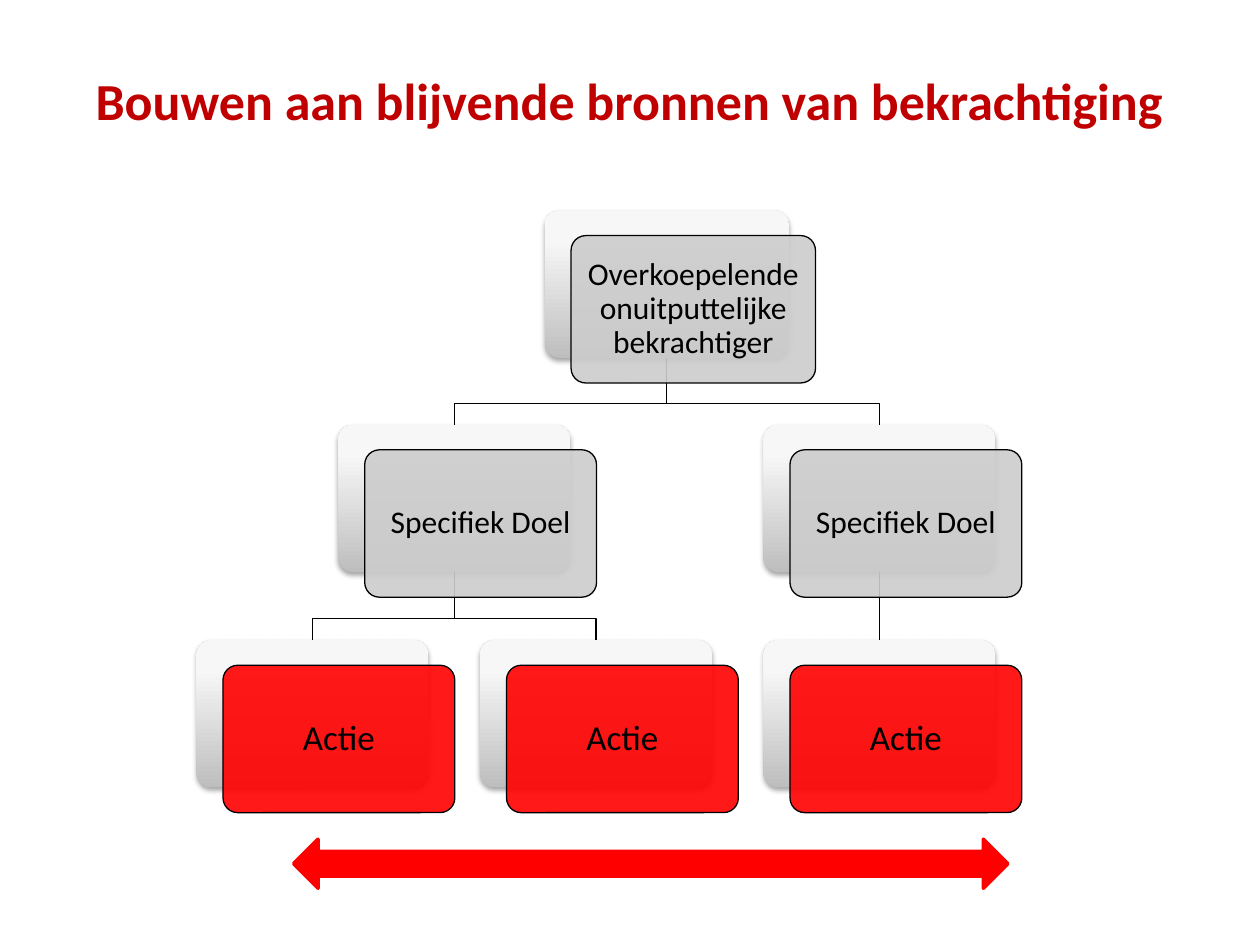
import pptx
import pptx.util
import pptx.dml.color
import pptx.enum.shapes
import pptx.enum.text
import pptx.oxml
import pptx.oxml.ns
from lxml import etree
from pptx.util import Inches, Pt

RGBColor = pptx.dml.color.RGBColor
Shapes = pptx.enum.shapes.MSO_SHAPE
BLACK = RGBColor(0x00, 0x00, 0x00)
RED = RGBColor(0xFF, 0x00, 0x00)
DARK_RED = RGBColor(0xC0, 0x00, 0x00)
GREY = RGBColor(0xCC, 0xCC, 0xCC)
SHADE_DARK = RGBColor(0xBE, 0xBE, 0xBE)
SHADE_LIGHT = RGBColor(0xF7, 0xF7, 0xF7)
FONT = "Calibri"

# Tree layout in inches
FIRST_CENTRE, COLUMN_STEP = 2.48, 2.25
ROW_TOPS = (1.67, 3.37, 5.08)
CARD_HEIGHT = 1.17
FRONT_SHIFT = (0.21, 0.2)
BRANCH_GAP = 0.17

# Each node: text, centre, row, children
ACTIONS = [("Actie", FIRST_CENTRE + COLUMN_STEP * column, 2, []) for column in range(3)]


def parent(text, row, children):
    """Return a node centred above its outer children."""
    centre = (children[0][1] + children[-1][1]) / 2
    return text, centre, row, children


GOALS = [parent("Specifiek Doel", 1, ACTIONS[:2]),
         parent("Specifiek Doel", 1, ACTIONS[2:])]
ROOT = parent("Overkoepelende onuitputtelijke bekrachtiger", 0, GOALS)
NODES = [ROOT, *GOALS, *ACTIONS]


def add_title(slide, text):
    title = slide.shapes.title
    title.left, title.top = Inches(0.5), Inches(0.42)
    title.width, title.height = Inches(9), Inches(1.25)
    frame = title.text_frame
    frame.text = text
    frame.word_wrap = True
    frame.auto_size = pptx.enum.text.MSO_AUTO_SIZE.NONE
    frame.vertical_anchor = pptx.enum.text.MSO_ANCHOR.MIDDLE
    frame.margin_bottom = Inches(0.55)
    paragraph = frame.paragraphs[0]
    paragraph.alignment = pptx.enum.text.PP_ALIGN.CENTER
    font = paragraph.font
    font.name, font.size, font.bold = FONT, Pt(29.7), True
    font.color.rgb = DARK_RED


def add_branch(slide, node, child):
    """Draw the bent line from a node down to one child."""
    start, end = node[1], child[1]
    start_y = ROW_TOPS[node[2]] + CARD_HEIGHT
    end_y = ROW_TOPS[child[2]]
    bend_y = end_y - BRANCH_GAP
    points = [(start, bend_y), (end, bend_y), (end, end_y)]
    if start == end:
        points = [(end, end_y)]
    builder = slide.shapes.build_freeform(Inches(start), Inches(start_y))
    builder.add_line_segments([(Inches(x), Inches(y)) for x, y in points], close=False)
    branch = builder.convert_to_shape()
    branch.shadow.inherit = False
    branch.fill.background()
    branch.line.color.rgb = BLACK
    branch.line.width = Pt(0.75)


def add_rounded_card(slide, left, top, width):
    card = slide.shapes.add_shape(
        Shapes.ROUNDED_RECTANGLE, Inches(left), Inches(top),
        Inches(width), Inches(CARD_HEIGHT))
    card.adjustments[0] = 0.1
    card.shadow.inherit = False
    return card


def style_back_card(card):
    """Give the card a grey gradient and a soft shadow below."""
    card.line.fill.background()
    card.fill.gradient()
    card.fill.gradient_angle = 90
    stops = card.fill.gradient_stops
    for stop, position, color in zip(stops, (0, 0.8), (SHADE_DARK, SHADE_LIGHT)):
        stop.position = position
        stop.color.rgb = color
    effects = card._element.spPr.find(pptx.oxml.ns.qn("a:effectLst"))
    effects.append(pptx.oxml.parse_xml(
        f'<a:outerShdw {pptx.oxml.ns.nsdecls("a")} blurRad="{Pt(3.1)}" '
        f'dist="{Pt(1.8)}" dir="5400000" rotWithShape="0">'
        '<a:srgbClr val="000000"><a:alpha val="35000"/></a:srgbClr></a:outerShdw>'))


def style_front_card(card, text, color, size, margin):
    card.fill.solid()
    card.fill.fore_color.rgb = color
    color_element = card._element.spPr.find(".//" + pptx.oxml.ns.qn("a:srgbClr"))
    etree.SubElement(color_element, pptx.oxml.ns.qn("a:alpha"), val="90000")
    card.line.color.rgb = BLACK
    card.line.width = Pt(0.75)
    frame = card.text_frame
    frame.text = text
    frame.word_wrap = True
    frame.vertical_anchor = pptx.enum.text.MSO_ANCHOR.MIDDLE
    frame.margin_left = frame.margin_right = Inches(margin)
    frame.margin_top = frame.margin_bottom = Inches(margin)
    paragraph = frame.paragraphs[0]
    paragraph.alignment = pptx.enum.text.PP_ALIGN.CENTER
    paragraph.line_spacing = 0.9
    paragraph.font.name, paragraph.font.size = FONT, Pt(size)
    paragraph.font.color.rgb = BLACK


def add_node(slide, node):
    text, centre, row, children = node
    width = 1.94 if row == 0 else 1.84
    left, top = centre - width / 2, ROW_TOPS[row]
    style_back_card(add_rounded_card(slide, left, top, width))
    front = add_rounded_card(slide, left + FRONT_SHIFT[0], top + FRONT_SHIFT[1], width)
    if children:
        style_front_card(front, text, GREY, 18, 0.07)
    else:
        style_front_card(front, text, RED, 20, 0.08)


def add_double_arrow(slide):
    arrow = slide.shapes.add_shape(
        Shapes.LEFT_RIGHT_ARROW, Inches(2.33), Inches(6.66), Inches(5.67), Inches(0.39))
    arrow.shadow.inherit = False
    arrow.fill.solid()
    arrow.fill.fore_color.rgb = RED
    arrow.line.color.rgb = RED
    arrow.line.width = Pt(2)


def main():
    presentation = pptx.Presentation()
    presentation.slide_width, presentation.slide_height = Inches(10), Inches(7.5)
    slide = presentation.slides.add_slide(presentation.slide_layouts[5])
    add_title(slide, "Bouwen aan blijvende bronnen van bekrachtiging")

    # Branches lie behind the cards
    for node in NODES:
        for child in node[3]:
            add_branch(slide, node, child)
    for node in NODES:
        add_node(slide, node)

    add_double_arrow(slide)
    presentation.save("out.pptx")


if __name__ == "__main__":
    main()
